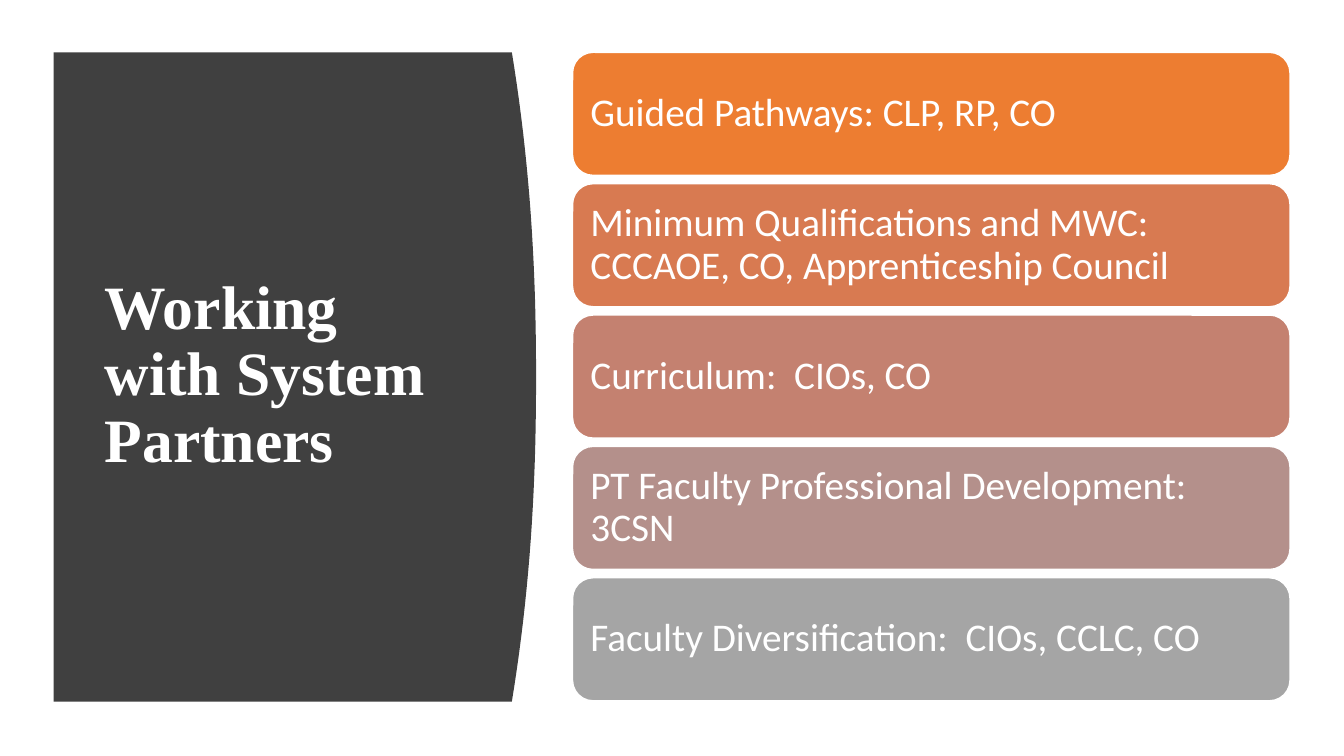
from pptx import Presentation
from pptx.dml.color import RGBColor
from pptx.enum.shapes import MSO_SHAPE
from pptx.enum.text import MSO_ANCHOR, PP_ALIGN
from pptx.util import Cm, Pt

WHITE = RGBColor(0xFF, 0xFF, 0xFF)
DARK = RGBColor(0x40, 0x40, 0x40)

TITLE = "Working with System Partners"
CARDS = [
    ("Guided Pathways: CLP, RP, CO", RGBColor(0xED, 0x7D, 0x31)),
    ("Minimum Qualifications and MWC: CCCAOE, CO, Apprenticeship Council",
     RGBColor(0xD8, 0x7A, 0x51)),
    ("Curriculum:  CIOs, CO", RGBColor(0xC4, 0x81, 0x70)),
    ("PT Faculty Professional Development: 3CSN", RGBColor(0xB4, 0x90, 0x8B)),
    ("Faculty Diversification:  CIOs, CCLC, CO", RGBColor(0xA5, 0xA5, 0xA5)),
]

TITLE_FONT = {"name": "Times New Roman", "size": Pt(44), "bold": True}
CARD_FONT = {"name": "Calibri", "size": Pt(28), "bold": False}
CARD_FRAME = {"margin_" + side: Cm(0.3)
              for side in ("left", "top", "right", "bottom")}

# Lengths in centimetres
TOP = 1.32
PANEL = {"left": 1.35, "edge": 12.9, "bulge": 0.61, "height": 16.36}
TITLE_BOX = (2.39, 2.82, 9.5, 13.31)
CARD_LEFT, CARD_WIDTH, CARD_HEIGHT, PITCH = 14.43, 18.08, 3.1, 3.31
STEPS = 40


def apply(target, values):
    for name, value in values.items():
        setattr(target, name, value)


def write(shape, text, font, frame_values):
    frame = shape.text_frame
    apply(frame, {"word_wrap": True, "vertical_anchor": MSO_ANCHOR.MIDDLE,
                  **frame_values})
    para = frame.paragraphs[0]
    para.text = text
    apply(para, {"alignment": PP_ALIGN.LEFT, "line_spacing": 0.9})
    apply(para.font, font)
    para.font.color.rgb = WHITE


def paint(shape, color):
    shape.shadow.inherit = False
    shape.fill.solid()
    shape.fill.fore_color.rgb = color


def add_panel(slide):
    """Draw the dark panel whose right side bows outward."""
    left, height = PANEL["left"], PANEL["height"]
    curve = []
    for step in range(STEPS + 1):
        part = step / STEPS
        bow = 1 - abs(2 * part - 1) ** 2.2
        curve.append((Cm(PANEL["edge"] + PANEL["bulge"] * bow),
                      Cm(TOP + height * part)))
    outline = slide.shapes.build_freeform(Cm(left), Cm(TOP))
    outline.add_line_segments(curve + [(Cm(left), Cm(TOP + height))])
    panel = outline.convert_to_shape()
    paint(panel, DARK)
    panel.line.fill.background()


def add_card(slide, row, text, color):
    card = slide.shapes.add_shape(
        MSO_SHAPE.ROUNDED_RECTANGLE, Cm(CARD_LEFT), Cm(TOP + row * PITCH),
        Cm(CARD_WIDTH), Cm(CARD_HEIGHT))
    paint(card, color)
    card.line.color.rgb = WHITE
    card.line.width = Pt(1)
    write(card, text, CARD_FONT, CARD_FRAME)


def main():
    deck = Presentation()
    apply(deck, {"slide_width": Cm(33.87), "slide_height": Cm(19.05)})
    slide = deck.slides.add_slide(deck.slide_layouts[6])
    add_panel(slide)
    title = slide.shapes.add_textbox(*map(Cm, TITLE_BOX))
    write(title, TITLE, TITLE_FONT, {})
    for row, (text, color) in enumerate(CARDS):
        add_card(slide, row, text, color)
    deck.save("out.pptx")


if __name__ == "__main__":
    main()
